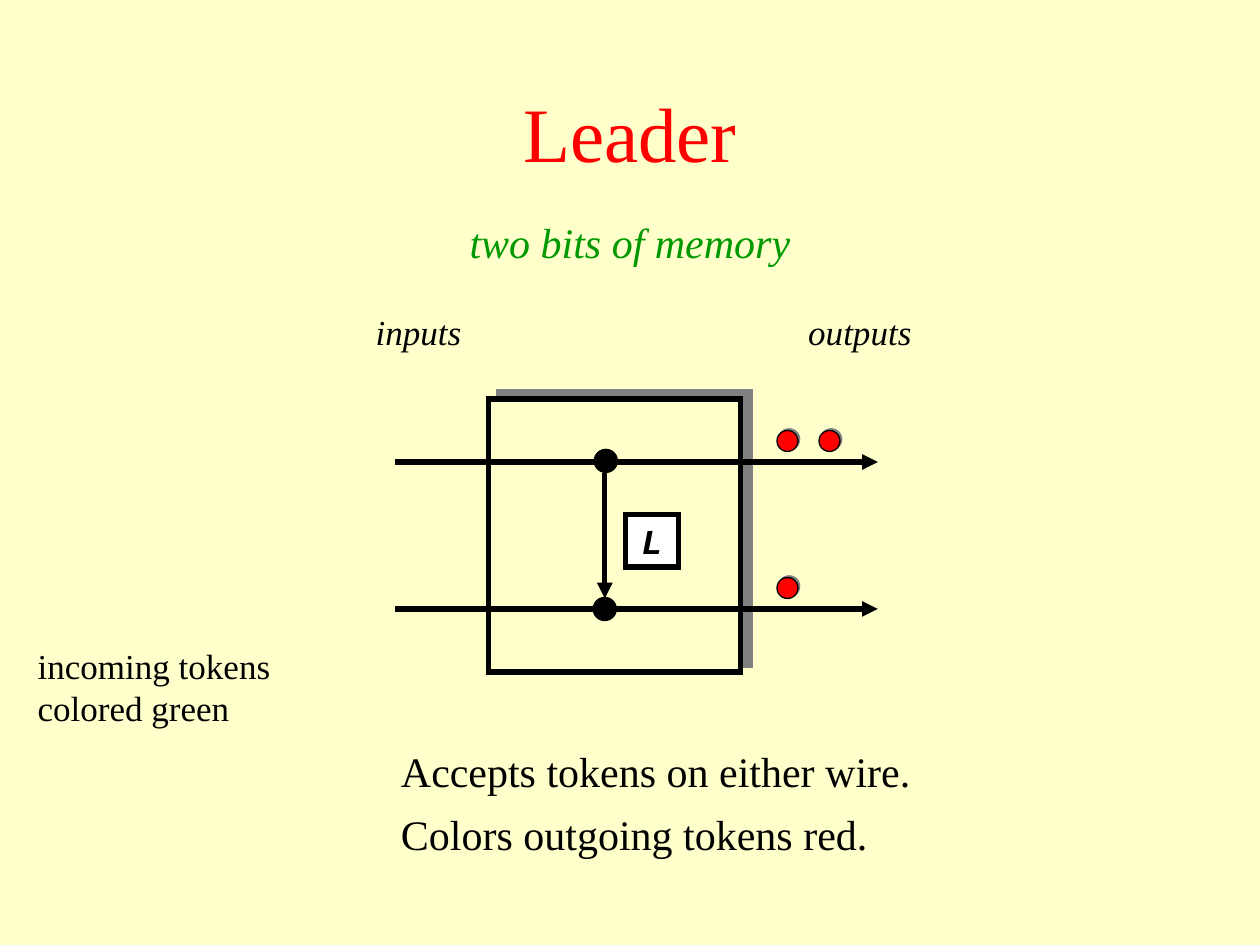
from lxml.etree import SubElement
from pptx import Presentation
from pptx.dml.color import RGBColor
from pptx.enum.shapes import MSO_CONNECTOR, MSO_SHAPE
from pptx.enum.text import MSO_ANCHOR, MSO_AUTO_SIZE, PP_ALIGN
from pptx.oxml.ns import qn
from pptx.util import Inches, Pt

HUES = {"paper": "FFFFCC", "red": "FF0000", "green": "009900",
        "ink": "000000", "white": "FFFFFF", "shade": "808080"}
FACE = "Times New Roman"
COLS, ROWS = 120, 90

TITLE = ("Leader", (9, 5, 102, 15))
SUB = ("two bits of memory", (0, 20, 120, 6))
ASIDE = ("incoming tokens colored green", (2.4, 60.8, 29.6, 9.2))
LABELS = [("inputs", (34.6, 29, 10.8, 5.2)), ("outputs", (75.8, 29, 12.5, 5.2))]
NOTES = ["Accepts tokens on either wire.", "Colors outgoing tokens red."]
NOTE_AT, NOTE_GAP = (37, 71, 58, 13), 6

FRAME = (46.5, 38, 24, 26)
LATCH = ("L", (59.6, 49, 5, 5))
WIRES = [44, 58]
LEFT, RIGHT = 37.6, 83.6
LINK = (57.6, 45, 57.6, 57)
NODES = [(56.5, 56.9), (56.6, 42.8)]
TOKENS = [(74, 41), (74, 55), (78, 41)]
NODE, TOKEN = 2.2, 2

deck = Presentation()
deck.slide_width, deck.slide_height = Inches(10), Inches(7.5)
slide = deck.slides.add_slide(deck.slide_layouts[5])
shapes = slide.shapes


def hue(name):
    return RGBColor.from_string(HUES[name])


def grid(*cells):
    sides = (deck.slide_width / COLS, deck.slide_height / ROWS)
    return [round(cell * sides[i % 2]) for i, cell in enumerate(cells)]


def write(shape, text, size, tint="ink", face=FACE, bold=False, slant=False,
          align=PP_ALIGN.LEFT):
    para = shape.text_frame.paragraphs[0]
    para.text, para.alignment = text, align
    font = para.font
    font.name, font.size, font.bold, font.italic = face, Pt(size), bold, slant
    font.color.rgb = hue(tint)
    return para


def add_text(text, area, size, wrap=True, grow=True, **style):
    box = shapes.add_textbox(*grid(*area))
    box.text_frame.word_wrap = wrap
    if grow:
        box.text_frame.auto_size = MSO_AUTO_SIZE.SHAPE_TO_FIT_TEXT
    return write(box, text, size, **style)


def draw_line(shape, width):
    shape.line.color.rgb = hue("ink")
    shape.line.width = Pt(width)
    return shape.element.spPr.find(qn("a:ln"))


def add_form(kind, area, tint, width, cast=None):
    form = shapes.add_shape(kind, *grid(*area))
    form.shadow.inherit = False
    form.fill.solid()
    form.fill.fore_color.rgb = hue(tint)
    SubElement(draw_line(form, width), qn("a:miter"), lim="800000")
    if cast:
        reach, angle = cast
        effects = form.element.spPr.find(qn("a:effectLst"))
        shade = SubElement(effects, qn("a:outerShdw"), dist=str(Pt(reach)),
                           dir=str(angle * 60000), algn="ctr", rotWithShape="0")
        SubElement(shade, qn("a:srgbClr"), val=HUES["shade"])
    return form


def add_wire(ends, tip):
    wire = shapes.add_connector(MSO_CONNECTOR.STRAIGHT, *grid(*ends))
    SubElement(draw_line(wire, 3), qn("a:" + tip), type="triangle")
    SubElement(wire.element.spPr, qn("a:effectLst"))


slide.background.fill.solid()
slide.background.fill.fore_color.rgb = hue("paper")

title = shapes.title
title.left, title.top, title.width, title.height = grid(*TITLE[1])
title.text_frame.vertical_anchor = MSO_ANCHOR.MIDDLE
write(title, TITLE[0], 44, "red", align=PP_ALIGN.CENTER)

add_text(*ASIDE, 20)
x, y, w, h = NOTE_AT
for i, note in enumerate(NOTES):
    para = add_text(note, (x, y + i * NOTE_GAP, w, h), 24, grow=False)
    para.line_spacing, para.space_before = 0.9, Pt(4.8)
    props = para._p.get_or_add_pPr()
    props.set("marL", str(Inches(0.38)))
    props.set("indent", str(Inches(-0.38)))

add_form(MSO_SHAPE.RECTANGLE, FRAME, "paper", 3, (7.2, 326))
for text, area in LABELS:
    add_text(text, area, 20, wrap=False, slant=True)

add_wire(LINK, "tailEnd")
for x, y in NODES:
    add_form(MSO_SHAPE.OVAL, (x, y, NODE, NODE), "ink", 0.75)
for y in WIRES:
    add_wire((RIGHT, y, LEFT, y), "headEnd")

latch = add_form(MSO_SHAPE.RECTANGLE, LATCH[1], "white", 3)
latch.text_frame.word_wrap = False
latch.text_frame.vertical_anchor = MSO_ANCHOR.MIDDLE
write(latch, LATCH[0], 20, face="Courier New", bold=True, slant=True,
      align=PP_ALIGN.CENTER)

add_text(*SUB, 24, tint="green", slant=True, align=PP_ALIGN.CENTER)
for x, y in TOKENS:
    add_form(MSO_SHAPE.OVAL, (x, y, TOKEN, TOKEN), "red", 0.75, (1.4, 315))

deck.save("out.pptx")
